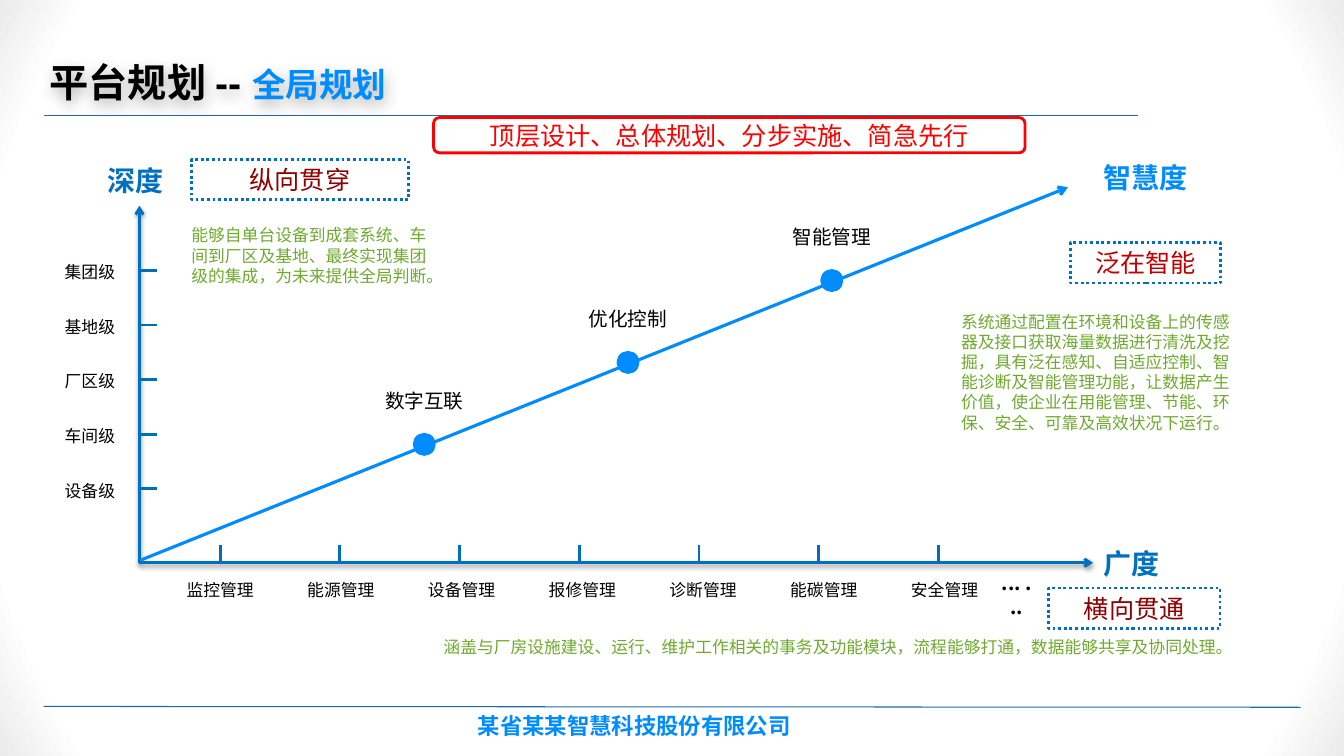
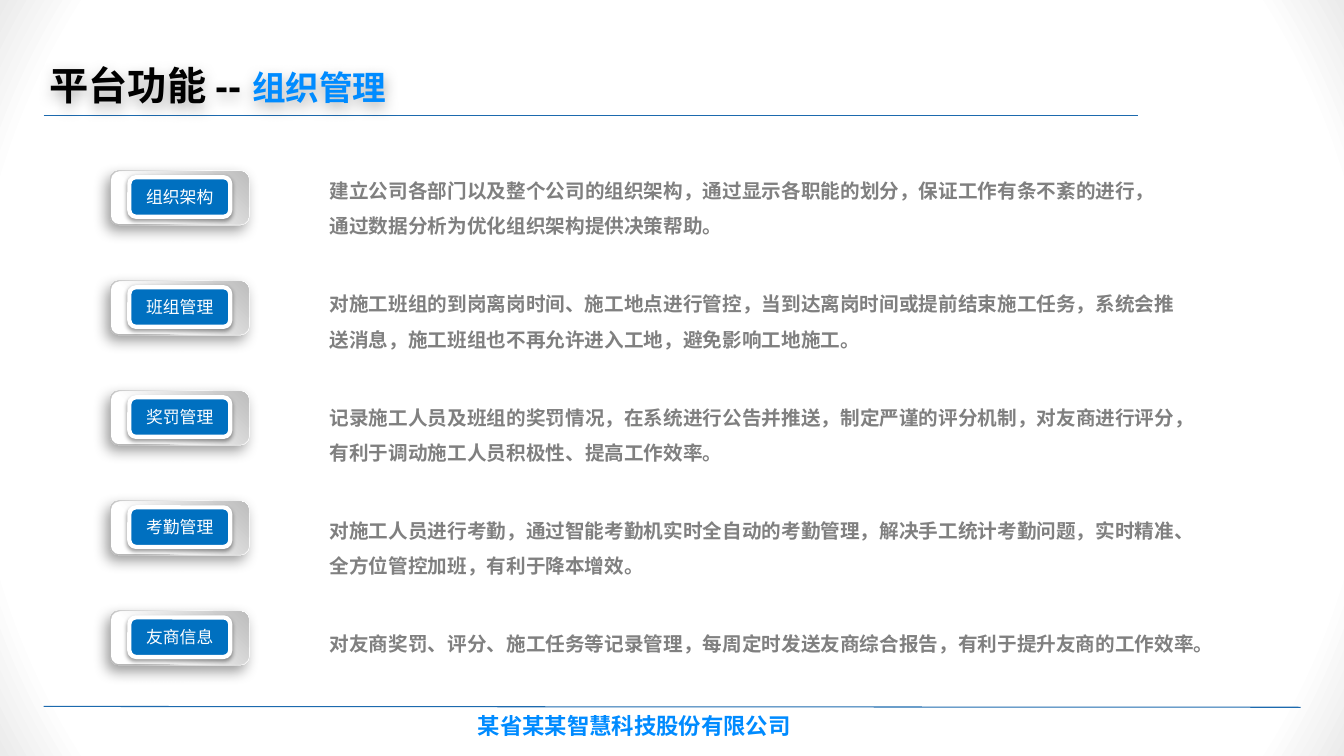
from lxml.etree import SubElement
from pptx import Presentation
from pptx.dml.color import RGBColor
from pptx.enum.dml import MSO_LINE
from pptx.enum.shapes import MSO_CONNECTOR, MSO_SHAPE
from pptx.enum.text import MSO_ANCHOR, MSO_AUTO_SIZE, PP_ALIGN
from pptx.oxml.ns import qn
from pptx.util import Inches, Pt

# The slide is a grid of 160 columns by 90 rows of square cells.
SLIDE_WIDTH, SLIDE_HEIGHT = Inches(13.33), Inches(7.5)
CELL = SLIDE_HEIGHT / 90

BLACK = RGBColor(0x00, 0x00, 0x00)
WHITE = RGBColor(0xFF, 0xFF, 0xFF)
EDGE_GRAY = RGBColor(0xEB, 0xEB, 0xEB)
PLATE_GRAY = RGBColor(0xB8, 0xB8, 0xB8)
PLATE_LIGHT_GRAY = RGBColor(0xBF, 0xBF, 0xBF)
TEXT_GRAY = RGBColor(0x80, 0x80, 0x80)
RULE_BLUE = RGBColor(0x1D, 0x6A, 0xAE)
BRIGHT_BLUE = RGBColor(0x00, 0x8B, 0xFF)
AXIS_BLUE = RGBColor(0x00, 0x70, 0xC0)
TICK_BLUE = RGBColor(0x00, 0x6E, 0xBC)
GREEN = RGBColor(0x6E, 0xAA, 0x2E)
DARK_RED = RGBColor(0x90, 0x00, 0x00)
BADGE_RED = RGBColor(0xC0, 0x00, 0x00)
RED = RGBColor(0xFF, 0x00, 0x00)

LATIN_FONT = "Arial"
CHINESE_FONT = "Noto Sans CJK SC"

# Shadows: opacity in percent, blur and distance in points, direction in degrees.
SOFT_SHADOW = (38, 3.1, 1.6, 90)
PLATE_SHADOW = (39, 10, 5, 123)
TITLE_SHADOW = (30, 10, 3, 90)


def grid(*cells):
    return [round(cell * CELL) for cell in cells]


def add_effects(properties, shadow):
    """Give shape properties their effect list, holding a shadow if one is named."""
    effects = properties.find(qn("a:effectLst"))
    if effects is None:
        effects = SubElement(properties, qn("a:effectLst"))
    if shadow:
        opacity, blur, distance, direction = shadow
        outer = SubElement(effects, qn("a:outerShdw"), blurRad=str(Pt(blur)), dist=str(Pt(distance)),
                           dir=str(direction * 60000), algn="ctr", rotWithShape="0")
        color = SubElement(outer, qn("a:srgbClr"), val=str(BLACK))
        SubElement(color, qn("a:alpha"), val=str(opacity * 1000))


def add_run(paragraph, text, size, color, name=CHINESE_FONT, bold=False):
    run = paragraph.add_run()
    run.text = text
    for attribute, value in {"size": Pt(size), "name": name, "bold": bold}.items():
        setattr(run.font, attribute, value)
    run.font.color.rgb = color
    SubElement(run.font._element, qn("a:ea"), typeface=CHINESE_FONT)


def write(shape, text, size, color, align=PP_ALIGN.CENTER, anchor=MSO_ANCHOR.MIDDLE,
          spacing=None, margins=None, **font):
    frame = shape.text_frame
    settings = {"word_wrap": True, "vertical_anchor": anchor}
    if margins:
        across, down = margins
        settings.update(margin_left=across, margin_right=across, margin_top=down, margin_bottom=down)
    for attribute, value in settings.items():
        setattr(frame, attribute, value)
    paragraph = frame.paragraphs[0]
    paragraph.alignment = align
    if spacing:
        paragraph.line_spacing = spacing
    add_run(paragraph, text, size, color, **font)


def add_text(shapes, box, text, size, color, **options):
    shape = shapes.add_textbox(*grid(*box))
    write(shape, text, size, color, **{"anchor": MSO_ANCHOR.TOP, **options})
    return shape


def add_box(shapes, box, kind=MSO_SHAPE.RECTANGLE, fill=None, line=None, width=2, dash=None, shadow=None):
    shape = shapes.add_shape(kind, *grid(*box))
    if fill is None:
        shape.fill.background()
    else:
        shape.fill.solid()
        shape.fill.fore_color.rgb = fill
    if line is None:
        shape.line.fill.background()
    else:
        shape.line.color.rgb = line
        shape.line.width = Pt(width)
        if dash:
            shape.line.dash_style = dash
    shape.shadow.inherit = False
    add_effects(shape.element.spPr, shadow)
    return shape


def add_line(shapes, start, end, color, width, arrow=False, shadow=None):
    line = shapes.add_connector(MSO_CONNECTOR.STRAIGHT, *grid(*start, *end))
    line.line.color.rgb = color
    line.line.width = Pt(width)
    if arrow:
        SubElement(line.line._get_or_add_ln(), qn("a:tailEnd"), type="arrow")
    add_effects(line.element.spPr, shadow)
    return line


def add_plate(shapes, box, stops, angle, shadow=None):
    """Add a rounded plate with a two-stop gradient; angle runs counter-clockwise."""
    plate = add_box(shapes, box, MSO_SHAPE.ROUNDED_RECTANGLE, shadow=shadow)
    plate.fill.gradient()
    plate.fill.gradient_angle = angle
    for stop, (position, color) in zip(plate.fill.gradient_stops, stops):
        stop.position = position
        stop.color.rgb = color


def paint_background(master):
    """Fill the master with white that darkens towards the corners."""
    fill = master.background.fill
    fill.gradient()
    for stop, (position, color) in zip(fill.gradient_stops, ((0.9, WHITE), (1, EDGE_GRAY))):
        stop.position = position
        stop.color.rgb = color
    gradient = master.element.find(".//" + qn("p:bgPr")).find(qn("a:gradFill"))
    gradient.remove(gradient.find(qn("a:lin")))
    radial = SubElement(gradient, qn("a:path"), path="circle")
    SubElement(radial, qn("a:fillToRect"), l="50000", t="50000", r="50000", b="50000")


def move_frame_to_layout(slide, layout):
    """Draw the rules and the footer on a slide, then hand them to its layout."""
    for placeholder in list(layout.placeholders)[1:]:
        layout.shapes.element.remove(placeholder.element)
    frame = [
        add_line(slide.shapes, (5.2, 13.8), (135.5, 13.8), RULE_BLUE, 0.75),
        add_line(slide.shapes, (5.2, 84.1), (154.8, 84.2), RULE_BLUE, 0.75),
        add_text(slide.shapes, (55.7, 84.2, 48.6, 4.4), "某省某某智慧科技股份有限公司", 16, BRIGHT_BLUE,
                 align=PP_ALIGN.JUSTIFY, name=LATIN_FONT, bold=True),
    ]
    for shape in frame:
        layout.shapes.element.append(shape.element)


def set_title(slide, topic, section, width, anchor):
    title = slide.shapes.title
    title.left, title.top, title.width, title.height = grid(4.7, 4.7, width, 9.1)
    write(title, topic + " -- ", 28, BLACK, PP_ALIGN.LEFT, anchor, 1.3, name=LATIN_FONT, bold=True)
    add_run(title.text_frame.paragraphs[0], section, 24, BRIGHT_BLUE, LATIN_FONT, True)
    title.text_frame.auto_size = MSO_AUTO_SIZE.NONE
    title.shadow.inherit = False
    add_effects(title.element.spPr, TITLE_SHADOW)


def add_axes(shapes):
    origin = (16.6, 67)
    names = []
    for text, box, color in (
        ("深度", (11.6, 18.4, 10, 6.1), AXIS_BLUE),
        ("广度", (130.1, 64.2, 10, 5.6), AXIS_BLUE),
        ("智慧度", (130.1, 18.4, 13.2, 5.5), BRIGHT_BLUE),
    ):
        name = add_box(shapes, box, fill=WHITE)
        write(name, text, 20, color, PP_ALIGN.JUSTIFY, bold=True)
        names.append(name)
    depth, breadth, _ = names
    for name, end, side in ((depth, (16.6, 24.5), 2), (breadth, (130.1, 67), 1)):
        axis = add_line(shapes, origin, end, AXIS_BLUE, 2, arrow=True, shadow=SOFT_SHADOW)
        axis.end_connect(name, side)
    add_line(shapes, (16.7, 66.7), (127.1, 22.3), BRIGHT_BLUE, 2.25, arrow=True)


def add_scales(shapes):
    for row, level in enumerate(("集团级", "基地级", "厂区级", "车间级", "设备级")):
        y = 32.2 + 6.5 * row
        add_line(shapes, (16.7, y), (18.7, y), TICK_BLUE, 2)
        add_text(shapes, (6.1, y - 1.6, 9.2, 3.6), level, 12, BLACK)
    modules = ("监控管理", "能源管理", "设备管理", "报修管理", "诊断管理", "能碳管理", "安全管理")
    for column, module in enumerate(modules):
        x = 26.2 + 14.25 * column
        add_line(shapes, (x, 66.8), (x, 64.9), TICK_BLUE, 2)
        add_text(shapes, (20.9 + 14.37 * column, 68.4, 10.6, 3.6), module, 12, BLACK)
    add_text(shapes, (117.7, 67.4, 6.6, 4.1), "... ...", 14, BLACK, bold=True)


def add_milestones(shapes):
    diameter = 2.4
    for step, label in enumerate(("数字互联", "优化控制", "智能管理")):
        x, y = 50.5 + 24.25 * step, 52.9 - 9.75 * step
        add_box(shapes, (x - diameter / 2, y - diameter / 2, diameter, diameter), MSO_SHAPE.OVAL,
                BRIGHT_BLUE, BRIGHT_BLUE)
        add_text(shapes, (x - 6.4, y - 7.2, 12.8, 4.1), label, 14, BLACK)


def add_themes(shapes):
    """Add each dotted theme label with its green explanation."""
    for theme, color, box, note, note_box in (
        ("纵向贯穿", DARK_RED, (22.8, 19, 25.8, 4.8),
         "能够自单台设备到成套系统、车间到厂区及基地、最终实现集团级的集成，为未来提供全局判断。",
         (21.6, 26.2, 31.4, 8.5)),
        ("泛在智能", BADGE_RED, (127.4, 28.9, 17.9, 4.8),
         "系统通过配置在环境和设备上的传感器及接口获取海量数据进行清洗及挖掘，具有泛在感知、自适应控制、"
         "智能诊断及智能管理功能，让数据产生价值，使企业在用能管理、节能、环保、安全、可靠及高效状况下运行。",
         (113.2, 36.5, 35.8, 15.7)),
        ("横向贯通", DARK_RED, (124.8, 70, 20.4, 4.8),
         "涵盖与厂房设施建设、运行、维护工作相关的事务及功能模块，流程能够打通，数据能够共享及协同处理。",
         (51.6, 75.2, 95.7, 3.6)),
    ):
        label = add_box(shapes, box, fill=WHITE, line=AXIS_BLUE, dash=MSO_LINE.ROUND_DOT)
        write(label, theme, 18, color)
        add_text(shapes, note_box, note, 12, GREEN, align=PP_ALIGN.LEFT)


def add_badge(slide, top, text):
    """Add a blue label lying on a shaded double plate."""
    shapes = slide.shapes.add_group_shape().shapes
    add_plate(shapes, (13.1, top, 16.6, 6.5), ((0.17, WHITE), (0.88, PLATE_GRAY)), 225, PLATE_SHADOW)
    add_plate(shapes, (13.2, top + 0.1, 16.4, 6.3), ((0.29, WHITE), (0.98, PLATE_LIGHT_GRAY)), 45)
    label = add_box(shapes, (15.4, top + 0.8, 12, 4.7), MSO_SHAPE.ROUNDED_RECTANGLE,
                    AXIS_BLUE, WHITE, 3, shadow=SOFT_SHADOW)
    write(label, text, 12, WHITE)


def build_planning(slide):
    set_title(slide, "平台规划", "全局规划", 57.8, MSO_ANCHOR.TOP)
    add_axes(slide.shapes)
    add_scales(slide.shapes)
    add_milestones(slide.shapes)
    add_themes(slide.shapes)
    slogan = add_box(slide.shapes, (51.6, 14, 70.4, 4.2), MSO_SHAPE.ROUNDED_RECTANGLE, line=RED)
    write(slogan, "顶层设计、总体规划、分步实施、简急先行", 18, RED)


def build_organisation(slide):
    set_title(slide, "平台功能", "组织管理", 53.2, MSO_ANCHOR.MIDDLE)
    functions = (
        ("组织架构", 100.7, 9.4, "建立公司各部门以及整个公司的组织架构，通过显示各职能的划分，"
         "保证工作有条不紊的进行，通过数据分析为优化组织架构提供决策帮助。"),
        ("班组管理", 103, 9.4, "对施工班组的到岗离岗时间、施工地点进行管控，当到达离岗时间或提前结束施工任务，"
         "系统会推送消息，施工班组也不再允许进入工地，避免影响工地施工。"),
        ("奖罚管理", 103.8, 9.4, "记录施工人员及班组的奖罚情况，在系统进行公告并推送，制定严谨的评分机制，"
         "对友商进行评分，有利于调动施工人员积极性、提高工作效率。"),
        ("考勤管理", 106.3, 9.4, "对施工人员进行考勤，通过智能考勤机实时全自动的考勤管理，解决手工统计考勤问题，"
         "实时精准、全方位管控加班，有利于降本增效。"),
        ("友商信息", 110.6, 5.2, "对友商奖罚、评分、施工任务等记录管理，每周定时发送友商综合报告，"
         "有利于提升友商的工作效率。"),
    )
    for row, (name, width, height, description) in enumerate(functions):
        add_badge(slide, 20.3 + 13.1 * row, name)
        add_text(slide.shapes, (38.4, 19.4 + 13.5 * row, width, height), description, 14, TEXT_GRAY,
                 align=PP_ALIGN.LEFT, spacing=1.5, margins=(Inches(0.07), Inches(0.04)), bold=True)


def main():
    presentation = Presentation()
    presentation.slide_width, presentation.slide_height = SLIDE_WIDTH, SLIDE_HEIGHT
    layout = presentation.slide_layouts.get_by_name("Title Only")
    paint_background(presentation.slide_master)
    planning, organisation = [presentation.slides.add_slide(layout) for _ in range(2)]
    move_frame_to_layout(planning, layout)
    build_planning(planning)
    build_organisation(organisation)
    presentation.save("out.pptx")


if __name__ == "__main__":
    main()
